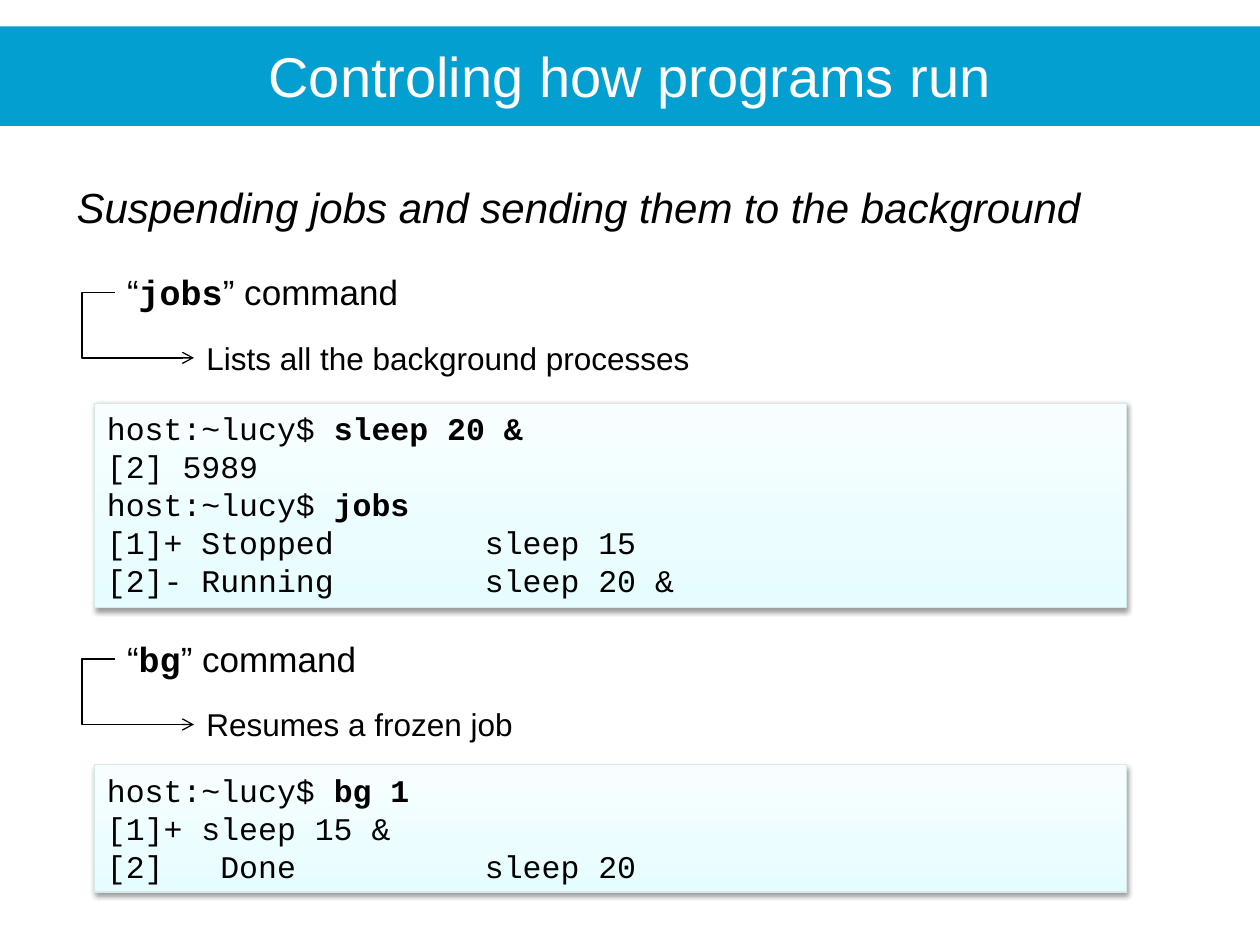
from dataclasses import dataclass

from lxml.etree import SubElement
from pptx import Presentation
from pptx.dml.color import RGBColor
from pptx.enum.shapes import MSO_CONNECTOR, MSO_SHAPE
from pptx.enum.text import MSO_ANCHOR, MSO_AUTO_SIZE, PP_ALIGN
from pptx.oxml.ns import qn
from pptx.util import Inches, Pt


@dataclass(frozen=True)
class Theme:
    """Colours, fonts and type sizes."""
    bar: str = "039FD0"
    ink: str = "000000"
    paper: str = "FFFFFF"
    edge: str = "D5E8EA"
    glow: tuple = ((0, "E6FDFF"), (35, "ECFDFF"), (100, "F8FEFF"))
    sans: str = "Arial"
    mono: str = "Courier New"
    title: int = 32
    subtitle: int = 24
    heading: int = 20
    body: int = 18


def add(parent, tag, **attrs):
    """Append a DrawingML element."""
    return SubElement(parent, qn(tag), {k: str(v) for k, v in attrs.items()})


class Deck:
    """Draws styled elements on a slide with a 100 by 75 grid."""

    def __init__(self, prs, theme):
        self.theme = theme
        self.s = prs.slides.add_slide(prs.slide_layouts[6])
        self.col = prs.slide_width / 100
        self.row = prs.slide_height / 75

    def place(self, x, y, w, h):
        """Turn grid units into lengths."""
        return [round(v) for v in (x * self.col, y * self.row, w * self.col, h * self.row)]

    def typeset(self, p, runs, size, color=None, italic=None):
        """Fill a paragraph with (text, font, bold) runs."""
        p.font.size = Pt(size)
        p.font.color.rgb = RGBColor.from_string(color or self.theme.ink)
        p.font.italic = italic
        fonts = {font for _, font, _ in runs}
        if len(fonts) == 1:
            p.font.name = fonts.pop()
        for text, font, bold in runs:
            r = p.add_run()
            r.text = text
            if p.font.name is None:
                r.font.name = font
            if bold:
                r.font.bold = True

    def bar(self, x, y, w, h):
        """Draw a plain coloured band."""
        sp = self.s.shapes.add_shape(MSO_SHAPE.RECTANGLE, *self.place(x, y, w, h))
        sp.shadow.inherit = False
        sp.fill.solid()
        sp.fill.fore_color.rgb = RGBColor.from_string(self.theme.bar)
        sp.line.fill.background()

    def text(self, x, y, w, h, runs, size, color=None, italic=None, align=PP_ALIGN.LEFT):
        """Draw a one-paragraph text box."""
        tf = self.s.shapes.add_textbox(*self.place(x, y, w, h)).text_frame
        tf.word_wrap = True
        tf.auto_size = MSO_AUTO_SIZE.SHAPE_TO_FIT_TEXT
        p = tf.paragraphs[0]
        p.alignment = align
        self.typeset(p, runs, size, color, italic)

    def elbow(self, x, y, w, h, bend):
        """Draw a bent arrow whose middle leg sits at a share of its width."""
        left, top, width, height = self.place(x, y, w, h)
        line = self.s.shapes.add_connector(
            MSO_CONNECTOR.ELBOW, left, top, left + width, top + height)
        line.line.color.rgb = RGBColor.from_string(self.theme.ink)
        line.line.width = Pt(0.75)
        props = line._element.spPr
        guides = props.find(qn("a:prstGeom")).get_or_add_avLst()
        add(guides, "a:gd", name="adj1", fmla=f"val {round(bend * 100000)}")
        add(props.find(qn("a:ln")), "a:tailEnd", type="arrow")
        add(props, "a:effectLst")

    def terminal(self, x, y, w, h, lines):
        """Draw a shaded panel of (plain, typed) console lines."""
        sp = self.s.shapes.add_shape(MSO_SHAPE.RECTANGLE, *self.place(x, y, w, h))
        sp.fill.gradient()
        sp.fill.gradient_angle = 90
        props = sp._element.spPr
        stops = props.find(qn("a:gradFill")).find(qn("a:gsLst"))
        stops.clear()
        for share, color in self.theme.glow:
            add(add(stops, "a:gs", pos=share * 1000), "a:srgbClr", val=color)
        sp.line.color.rgb = RGBColor.from_string(self.theme.edge)
        sp.line.width = Pt(0.75)
        sp.shadow.inherit = False
        shade = add(props.find(qn("a:effectLst")), "a:outerShdw", blurRad=int(Pt(3.1)),
                    dist=int(Pt(1.6)), dir=90 * 60000, rotWithShape=0)
        add(add(shade, "a:srgbClr", val=self.theme.ink), "a:alpha", val=38000)
        tf = sp.text_frame
        tf.word_wrap = True
        tf.auto_size = MSO_AUTO_SIZE.SHAPE_TO_FIT_TEXT
        tf.vertical_anchor = MSO_ANCHOR.TOP
        for i, (plain, typed) in enumerate(lines):
            p = tf.add_paragraph() if i else tf.paragraphs[0]
            p.alignment = PP_ALIGN.LEFT
            runs = [(plain, self.theme.mono, False), (typed, self.theme.mono, True)]
            self.typeset(p, [run for run in runs if run[0]], self.theme.body)

    def command(self, y, name, detail, panel_y, panel_h, lines):
        """Draw a command heading, its meaning and a sample session."""
        t = self.theme
        heading = [("“", t.sans, False), (name, t.mono, True), ("” command", t.sans, False)]
        self.text(9.1, y, 73.2, 4.4, heading, t.heading)
        self.text(15.4, y + 5.4, 81.1, 4, [(detail, t.sans, False)], t.body)
        self.elbow(9.1, y + 2.2, 6.3, 5.2, -0.41)
        self.terminal(7.5, panel_y, 81.9, panel_h, lines)


def main():
    """Build the slide."""
    prs = Presentation()
    prs.slide_width, prs.slide_height = Inches(10), Inches(7.5)
    t = Theme()
    deck = Deck(prs, t)
    deck.bar(0, 2.1, 100, 7.9)
    deck.text(0, 2.8, 100, 6.4, [("Controling how programs run", t.sans, False)],
              t.title, color=t.paper, align=PP_ALIGN.CENTER)
    deck.text(5.1, 13.9, 86.6, 5,
              [("Suspending jobs and sending them to the background", t.sans, False)],
              t.subtitle, italic=True)
    prompt = "host:~lucy$ "
    deck.command(21, "jobs", "Lists all the background processes", 32, 16.2, [
        (prompt, "sleep 20 &"),
        ("[2] 5989", ""),
        (prompt, "jobs"),
        ("[1]+ Stopped\t\t\tsleep 15", ""),
        ("[2]- Running\t\t\tsleep 20 &", ""),
    ])
    deck.command(50.1, "bg", "Resumes a frozen job", 60.7, 10.1, [
        (prompt, "bg 1"),
        ("[1]+ sleep 15 &", ""),
        ("[2]   Done\t\t\tsleep 20", ""),
    ])
    prs.save("out.pptx")


if __name__ == "__main__":
    main()
